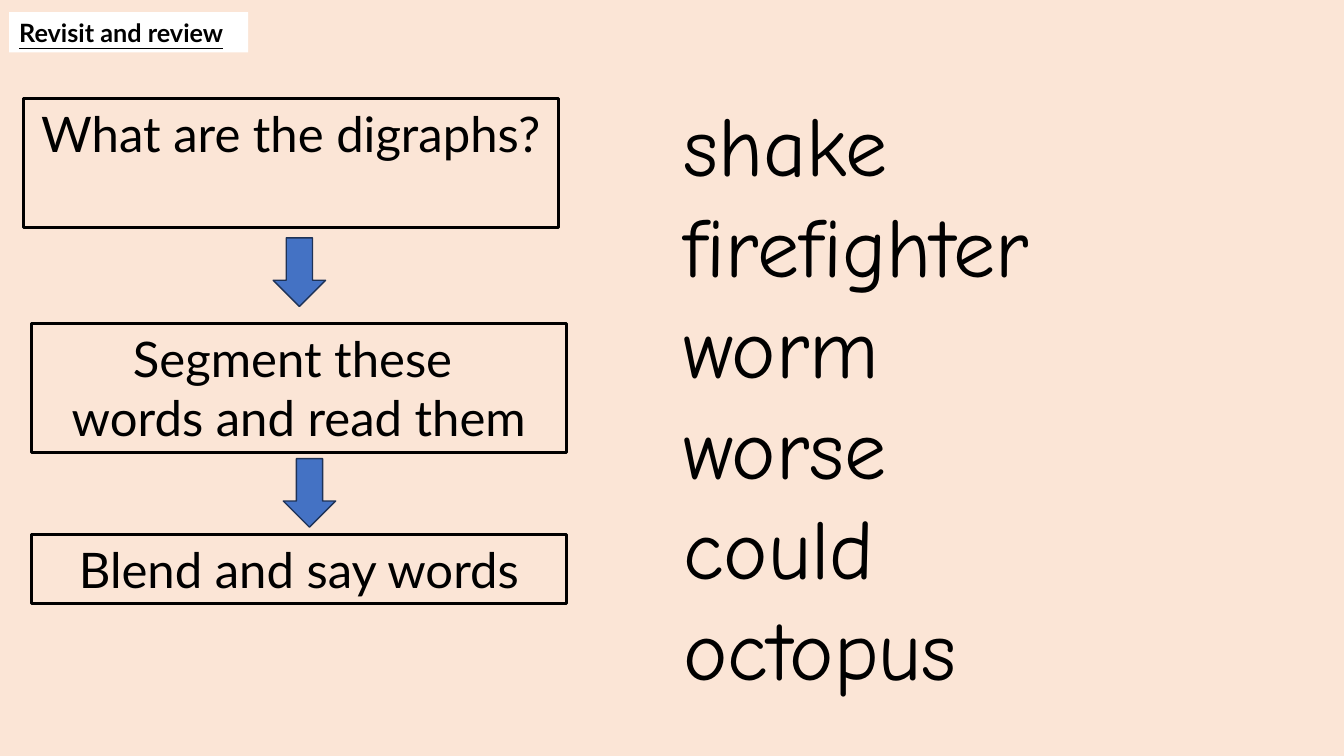
import pptx
import pptx.dml.color
import pptx.enum.shapes
import pptx.enum.text
import pptx.util

SHAPES = pptx.enum.shapes.MSO_SHAPE
ALIGN = pptx.enum.text.PP_ALIGN
ANCHOR = pptx.enum.text.MSO_ANCHOR

BOX_WIDTH = 39.83
ARROW_SIZE = (3.9, 9.07)
STEPS = [
    (1.73, 13.07, 17.07, ["What are the digraphs?"]),
    (2.33, 42.8, 17.07, ["Segment these ", "words and read them"]),
    (2.33, 70.67, 9.2, ["Blend and say words"]),
]
ARROWS = [(20.33, 31.47), (21.08, 60.67)]
WORDS = ["shake", "firefighter", "worm", "worse", "could", "octopus"]


def colour(value):
    return pptx.dml.color.RGBColor.from_string(value)


class ReviewSlide:
    """Holds the style and the slide; lengths are percentages of its size."""

    ink = "000000"
    paper = "FBE5D6"
    label_fill = "FFFFFF"
    arrow_fill = "4472C4"
    arrow_line = "1E3256"
    body_font = "Lato"
    word_font = "Comic Neue"

    def __init__(self, deck):
        self.deck = deck
        self.slide = deck.slides.add_slide(deck.slide_layouts[5])
        background = self.slide.background.fill
        background.solid()
        background.fore_color.rgb = colour(self.paper)

    def place(self, left, top, width, height):
        across, down = self.deck.slide_width, self.deck.slide_height
        return [round(share * side / 100) for share, side in
                zip((left, top, width, height), (across, down, across, down))]

    def set_text(self, shape, lines, size, font, align=ALIGN.LEFT):
        frame = shape.text_frame
        frame.word_wrap = True
        frame.auto_size = pptx.enum.text.MSO_AUTO_SIZE.NONE
        frame.vertical_anchor = ANCHOR.TOP
        frame.text = "\n".join(lines)
        for paragraph in frame.paragraphs:
            paragraph.alignment = align
            paragraph.font.size = pptx.util.Pt(size)
            paragraph.font.name = font
            paragraph.font.color.rgb = colour(self.ink)

    def outline(self, shape, line, width):
        shape.shadow.inherit = False
        shape.line.color.rgb = colour(line)
        shape.line.width = pptx.util.Pt(width)

    def title(self, text, *area):
        title = self.slide.shapes.title
        title.left, title.top, title.width, title.height = self.place(*area)
        title.fill.solid()
        title.fill.fore_color.rgb = colour(self.label_fill)
        self.set_text(title, [text], 18, self.body_font)
        font = title.text_frame.paragraphs[0].font
        font.bold = True
        font.underline = True

    def word_list(self, words, *area):
        box = self.slide.shapes.add_textbox(*self.place(*area))
        self.set_text(box, words, 60, self.word_font)

    def step(self, lines, *area):
        box = self.slide.shapes.add_shape(SHAPES.RECTANGLE, *self.place(*area))
        box.fill.background()
        self.outline(box, self.ink, 2.25)
        self.set_text(box, lines, 35, self.body_font, ALIGN.CENTER)

    def arrow(self, *area):
        arrow = self.slide.shapes.add_shape(SHAPES.DOWN_ARROW, *self.place(*area))
        arrow.fill.solid()
        arrow.fill.fore_color.rgb = colour(self.arrow_fill)
        self.outline(arrow, self.arrow_line, 1)


def main():
    deck = pptx.Presentation()
    deck.slide_width = pptx.util.Inches(13.33)
    deck.slide_height = pptx.util.Inches(7.5)

    review = ReviewSlide(deck)
    review.title("Revisit and review", 0.68, 1.6, 17.78, 5.33)
    review.word_list(WORDS, 50.1, 11.6, 49.2, 86.67)
    for left, top, height, lines in STEPS:
        review.step(lines, left, top, BOX_WIDTH, height)
    for left, top in ARROWS:
        review.arrow(left, top, *ARROW_SIZE)

    deck.save("out.pptx")


if __name__ == "__main__":
    main()
